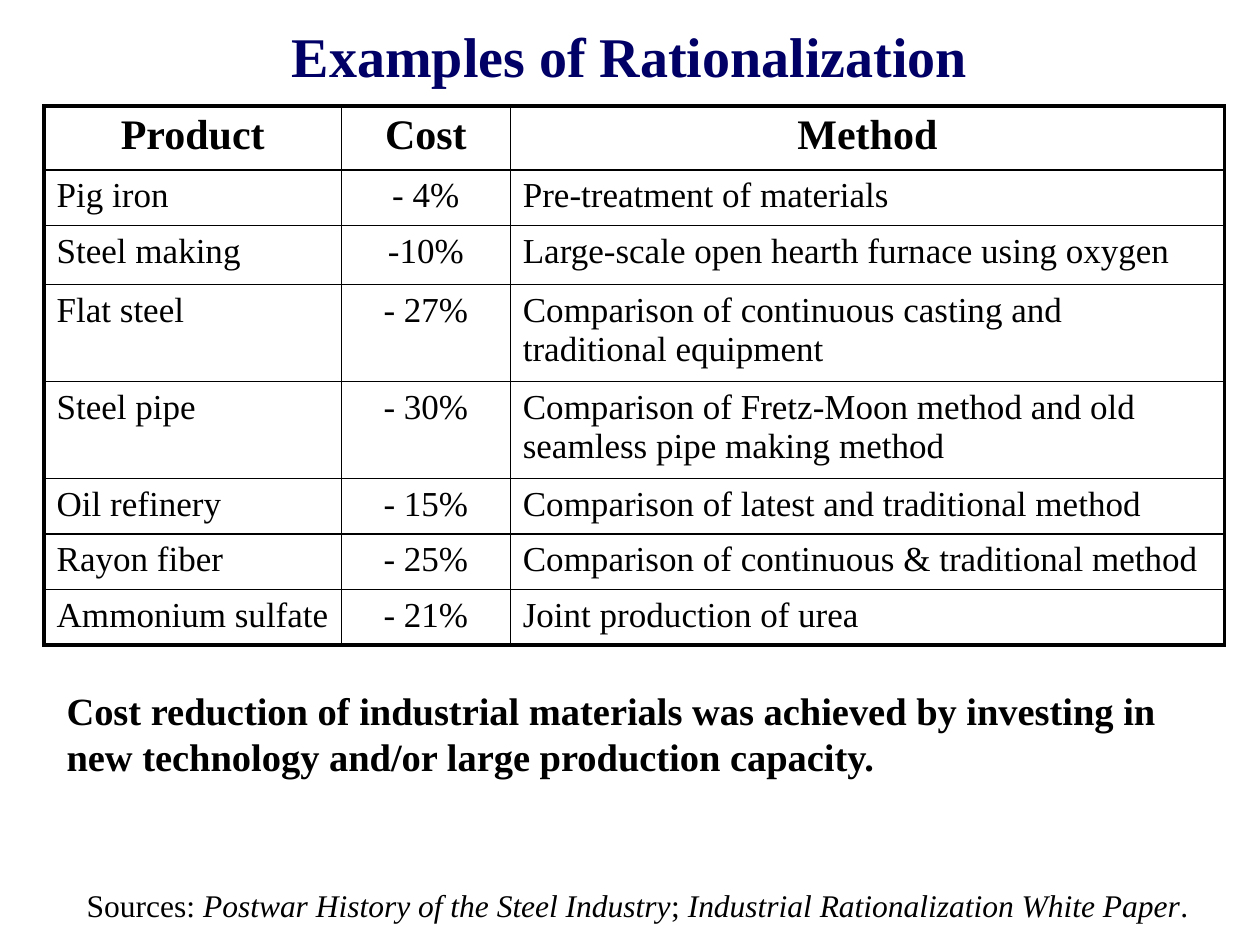
import pptx
import pptx.dml.color
import pptx.enum.text
import pptx.oxml.ns
import pptx.util
from lxml import etree
from pptx.util import Inches

FONT = "Times New Roman"
BLACK = pptx.dml.color.RGBColor(0x00, 0x00, 0x00)
NAVY = pptx.dml.color.RGBColor(0x00, 0x00, 0x66)
LEFT = pptx.enum.text.PP_ALIGN.LEFT
CENTER = pptx.enum.text.PP_ALIGN.CENTER
OUTER_LINE, INNER_LINE = 2.25, 1

COLUMN_WIDTHS = [2.36, 1.34, 5.67]
ROW_HEIGHTS = [0.51, 0.44, 0.47, 0.77, 0.77, 0.44, 0.44, 0.44]
ROWS = [
    ("Product", "Cost", "Method"),
    ("Pig iron", "- 4%", "Pre-treatment of materials"),
    ("Steel making", "-10%", "Large-scale open hearth furnace using oxygen"),
    ("Flat steel", "- 27%", "Comparison of continuous casting and traditional equipment"),
    ("Steel pipe", "- 30%", "Comparison of Fretz-Moon method and old seamless pipe making method"),
    ("Oil refinery", "- 15%", "Comparison of latest and traditional method"),
    ("Rayon fiber", "- 25%", "Comparison of continuous & traditional method"),
    ("Ammonium sulfate", "- 21%", "Joint production of urea"),
]


def add_element(parent, tag, **attributes):
    return etree.SubElement(parent, pptx.oxml.ns.qn(tag), **attributes)


def format_paragraph(para, size, color=BLACK, bold=False, align=LEFT, space_percent=50):
    para.alignment = align
    spacing = add_element(para._p.get_or_add_pPr(), "a:spcBef")
    add_element(spacing, "a:spcPct", val=str(space_percent * 1000))
    for span in para.runs:
        span.font.name = FONT
        span.font.size = pptx.util.Pt(size)
        span.font.bold = bold
        span.font.color.rgb = color


def add_text(page, left, top, width, height, parts, size, **style):
    box = page.shapes.add_textbox(Inches(left), Inches(top), Inches(width), Inches(height))
    box.text_frame.word_wrap = True
    para = box.text_frame.paragraphs[0]
    for text, italic in parts:
        span = para.add_run()
        span.text = text
        span.font.italic = italic
    format_paragraph(para, size, **style)


def set_border(cell, side, width):
    line = add_element(cell._tc.get_or_add_tcPr(), f"a:ln{side}", w=str(pptx.util.Pt(width)))
    fill = add_element(line, "a:solidFill")
    add_element(fill, "a:srgbClr", val=str(BLACK))


def format_cell(cell, row, column):
    on_edge = {
        "L": column == 0,
        "R": column == len(COLUMN_WIDTHS) - 1,
        "T": row == 0,
        "B": row == len(ROWS) - 1,
    }
    for side, outer in on_edge.items():
        set_border(cell, side, OUTER_LINE if outer else INNER_LINE)
    cell.fill.background()
    header = row == 0
    format_paragraph(
        cell.text_frame.paragraphs[0],
        24 if header else 20,
        bold=header,
        align=CENTER if header or column == 1 else LEFT,
        space_percent=20,
    )


def add_cost_table(page):
    frame = page.shapes.add_table(
        len(ROWS), len(COLUMN_WIDTHS), Inches(0.35), Inches(0.84),
        Inches(sum(COLUMN_WIDTHS)), Inches(sum(ROW_HEIGHTS)),
    )
    table = frame.table
    table.first_row = False
    table.horz_banding = False
    for column, width in zip(table.columns, COLUMN_WIDTHS):
        column.width = Inches(width)
    for row, height in zip(table.rows, ROW_HEIGHTS):
        row.height = Inches(height)
    for row, texts in enumerate(ROWS):
        for column, text in enumerate(texts):
            cell = table.cell(row, column)
            cell.text_frame.text = text
            format_cell(cell, row, column)


def main():
    deck = pptx.Presentation()
    deck.slide_width = Inches(10)
    deck.slide_height = Inches(7.5)
    page = deck.slides.add_slide(deck.slide_layouts[6])
    add_cost_table(page)
    add_text(page, 1.06, 0.12, 7.88, 0.63, [("Examples of Rationalization", False)],
             32, color=NAVY, bold=True, align=CENTER)
    sources = [
        ("Sources: ", False),
        ("Postwar History of the Steel Industry", True),
        ("; ", False),
        ("Industrial Rationalization White Paper", True),
        (".", False),
    ]
    add_text(page, 0.59, 6.98, 9.14, 0.4, sources, 18)
    conclusion = (
        "Cost reduction of industrial materials was achieved by investing in "
        "new technology and/or large production capacity."
    )
    add_text(page, 0.43, 5.4, 9.21, 0.83, [(conclusion, False)], 22, bold=True)
    deck.save("out.pptx")


if __name__ == "__main__":
    main()
